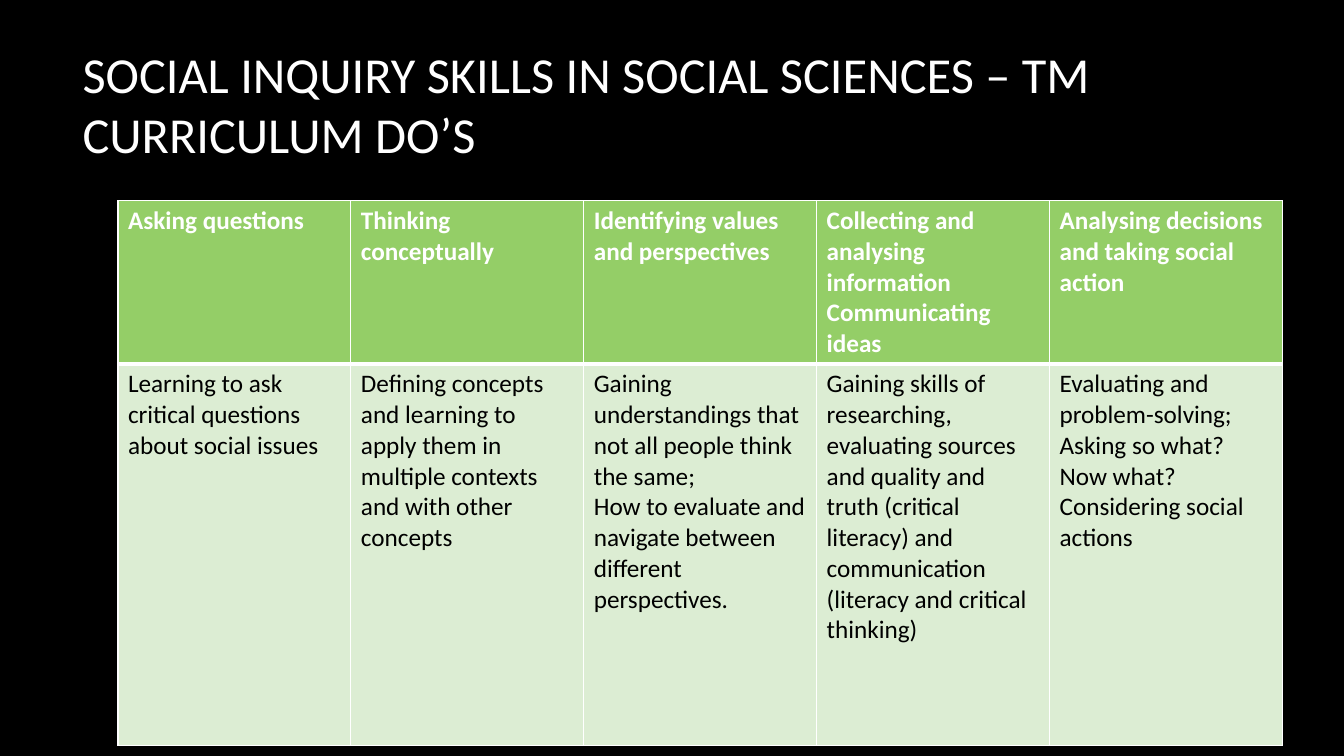
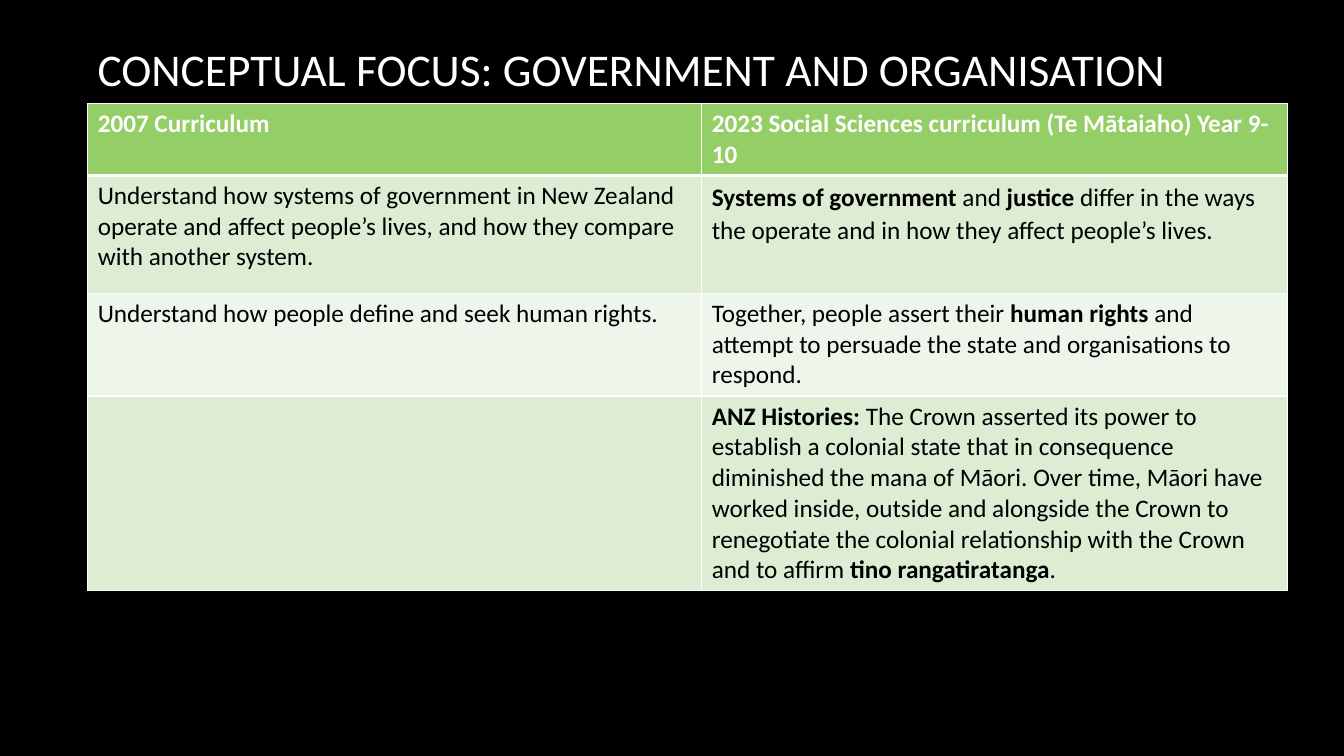
import pptx
import pptx.dml.color
import pptx.enum.text
import pptx.oxml
import pptx.oxml.ns
import pptx.util
from pptx.util import Inches

RGBColor = pptx.dml.color.RGBColor
BLACK = RGBColor(0x00, 0x00, 0x00)
WHITE = RGBColor(0xFF, 0xFF, 0xFF)
HEADER_GREEN = RGBColor(0x94, 0xCE, 0x67)
BAND_GREENS = (RGBColor(0xDC, 0xED, 0xD3), RGBColor(0xEE, 0xF6, 0xEB))
FONT = "Calibri"
CELL_SIZE = 18
THIN, THICK = 1, 3

SKILLS = [
    ["Asking questions",
     "Thinking conceptually",
     "Identifying values and perspectives",
     "Collecting and analysing information Communicating ideas",
     "Analysing decisions and taking social action"],
    ["Learning to ask critical questions about social issues",
     "Defining concepts and learning to apply them in multiple contexts "
     "and with other concepts",
     "Gaining understandings that not all people think the same;\n"
     "How to evaluate and navigate between different perspectives.",
     "Gaining skills of researching, evaluating sources and quality and truth "
     "(critical literacy) and communication (literacy and critical thinking)",
     "Evaluating and problem-solving; Asking so what? Now what?\n"
     "Considering social actions"],
]

CURRICULA = [
    ["2007 Curriculum",
     "2023 Social Sciences curriculum (Te Mātaiaho) Year 9-10"],
    ["Understand how systems of government in New Zealand operate and affect "
     "people’s lives, and how they compare with another system.",
     "*Systems of government *and *justice* differ in the ways the operate "
     "and in how they affect people’s lives."],
    ["Understand how people define and seek human rights.",
     "Together, people assert their *human rights *and attempt to persuade "
     "the state and organisations to respond."],
    ["",
     "*ANZ Histories: *The Crown asserted its power to establish a colonial "
     "state that in consequence diminished the mana of Māori. Over time, Māori "
     "have worked inside, outside and alongside the Crown to renegotiate the "
     "colonial relationship with the Crown and to affirm *tino rangatiratanga*."],
]


def style_font(font, size, color, bold=False):
    font.name = FONT
    font.size = pptx.util.Pt(size)
    font.color.rgb = color
    font.bold = bold


def add_slide(prs):
    s = prs.slides.add_slide(prs.slide_layouts[6])
    s.background.fill.solid()
    s.background.fill.fore_color.rgb = BLACK
    return s


def add_title(s, text, left, top, width, height, size):
    sp = s.shapes.add_textbox(Inches(left), Inches(top),
                              Inches(width), Inches(height))
    tf = sp.text_frame
    tf.word_wrap = True
    tf.vertical_anchor = pptx.enum.text.MSO_ANCHOR.MIDDLE
    tf.text = text
    style_font(tf.paragraphs[0].runs[0].font, size, WHITE)


def set_borders(cell, **widths):
    """Draw white cell borders; widths are points keyed by L, R, T and B."""
    tc_pr = cell._tc.get_or_add_tcPr()
    for side in "LRTB":
        tc_pr.append(pptx.oxml.parse_xml(
            f'<a:ln{side} {pptx.oxml.ns.nsdecls("a")} '
            f'w="{pptx.util.Pt(widths.get(side, THIN))}">'
            f'<a:solidFill><a:srgbClr val="{WHITE}"/></a:solidFill></a:ln{side}>'))


def fill_text(cell, text, color, bold):
    """Write one paragraph a line; asterisks enclose bold words."""
    tf = cell.text_frame
    for i, line in enumerate(text.split("\n")):
        p = tf.add_paragraph() if i else tf.paragraphs[0]
        style_font(p.font, CELL_SIZE, color, bold)
        for j, part in enumerate(line.split("*")):
            if part:
                r = p.add_run()
                r.text = part
                style_font(r.font, CELL_SIZE, color, bold or j % 2 == 1)


def add_table(s, rows, left, top, col_widths, row_heights):
    table = s.shapes.add_table(
        len(rows), len(col_widths), Inches(left), Inches(top),
        Inches(sum(col_widths)), Inches(sum(row_heights))).table
    for column, width in zip(table.columns, col_widths):
        column.width = Inches(width)
    for i, (row, height) in enumerate(zip(rows, row_heights)):
        table.rows[i].height = Inches(height)
        header = i == 0
        for j, text in enumerate(row):
            cell = table.cell(i, j)
            set_borders(cell, T=THICK if i == 1 else THIN,
                        B=THICK if header else THIN)
            cell.fill.solid()
            cell.fill.fore_color.rgb = (
                HEADER_GREEN if header else BAND_GREENS[(i - 1) % 2])
            fill_text(cell, text, WHITE if header else BLACK, header)
    return table


def add_skills_slide(prs):
    s = add_slide(prs)
    add_title(s, "SOCIAL INQUIRY SKILLS IN SOCIAL SCIENCES – TM CURRICULUM DO’S",
              0.72, 0.26, 10.29, 1.53, 36)
    add_table(s, SKILLS, 1.17, 1.99, [2.31] * 5, [1.62, 3.79])


def add_government_slide(prs):
    s = add_slide(prs)
    add_title(s, "CONCEPTUAL FOCUS: GOVERNMENT AND ORGANISATION",
              0.87, 0.2, 11.08, 0.96, 32.4)
    table = add_table(s, CURRICULA, 0.87, 1.03, [6.09, 5.81],
                      [0.71, 1.17, 1.02, 1.93])
    justice = table.cell(1, 1).text_frame.paragraphs[0]
    justice.line_spacing = 1.07
    justice.space_after = pptx.util.Pt(8)


def main():
    prs = pptx.Presentation()
    prs.slide_width = Inches(13.33)
    prs.slide_height = Inches(7.5)
    add_skills_slide(prs)
    add_government_slide(prs)
    prs.save("out.pptx")


if __name__ == "__main__":
    main()
